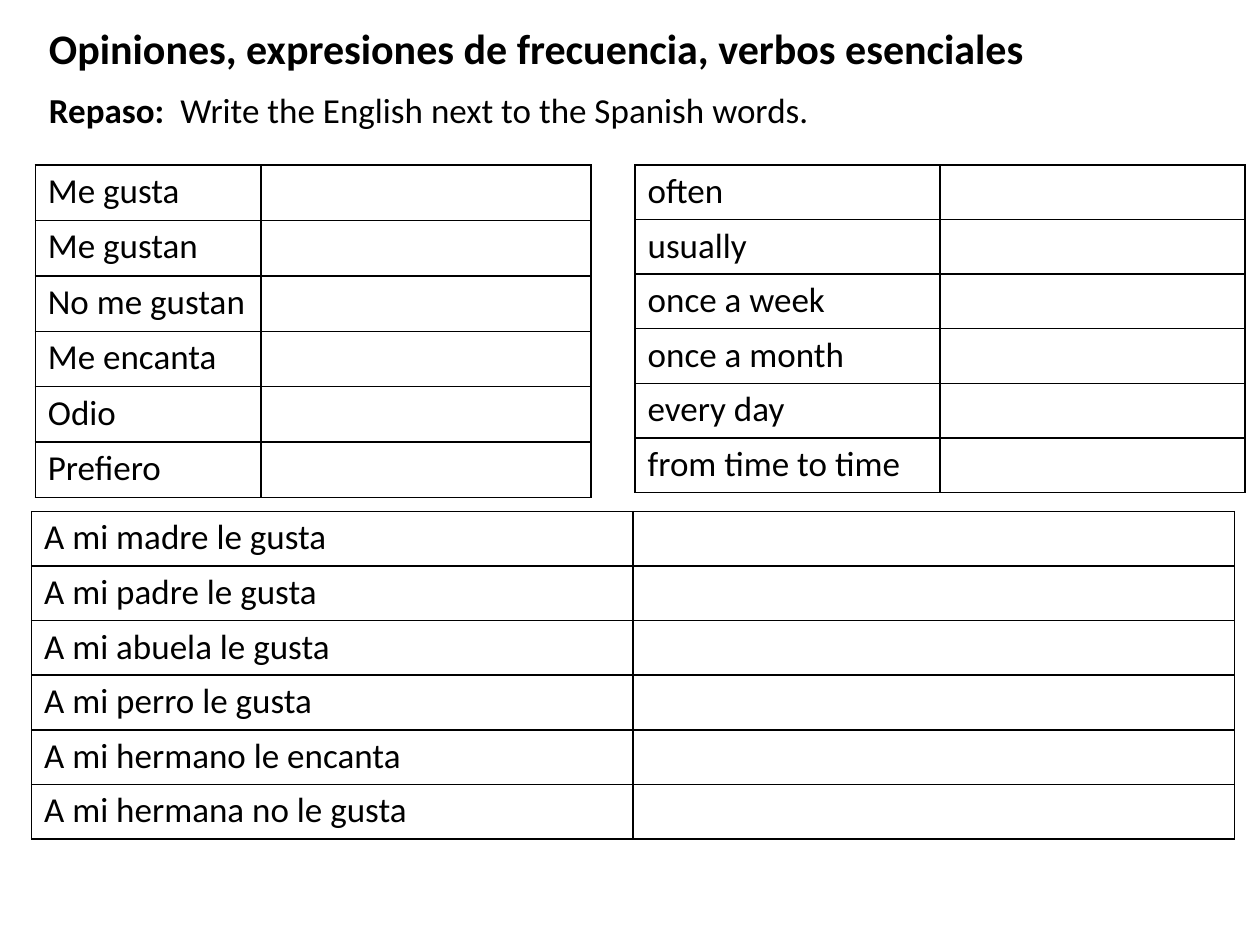
import dataclasses

import lxml.etree
import pptx
import pptx.dml.color
import pptx.oxml.ns
import pptx.util

SLIDE_WIDTH = pptx.util.Inches(10)
SLIDE_HEIGHT = pptx.util.Inches(7.5)
GRID_COLUMNS = 100
GRID_ROWS = 75
FONT = "Calibri"
BLACK = "000000"
BORDER_POINTS = 1


@dataclasses.dataclass(frozen=True)
class VocabularyTable:
    """A two-column table of phrases with blank answer cells, in grid units."""

    left: float
    top: float
    widths: tuple[float, float]
    height: float
    phrases: tuple[str, ...]


@dataclasses.dataclass(frozen=True)
class Heading:
    """A line of text made of (words, bold) pieces, in grid units."""

    left: float
    top: float
    width: float
    height: float
    size: int
    pieces: tuple[tuple[str, bool], ...]


OPINIONS = VocabularyTable(
    2.8, 13.1, (17.9, 26.2), 26.4,
    ("Me gusta", "Me gustan", "No me gustan", "Me encanta", "Odio", "Prefiero"),
)
FAMILY = VocabularyTable(
    2.5, 40.6, (47.75, 47.75), 26,
    (
        "A mi madre le gusta",
        "A mi padre le gusta",
        "A mi abuela le gusta",
        "A mi perro le gusta",
        "A mi hermano le encanta",
        "A mi hermana no le gusta",
    ),
)
FREQUENCY = VocabularyTable(
    50.4, 13.1, (24.2, 24.2), 26,
    ("often", "usually", "once a week", "once a month", "every day", "from time to time"),
)
INSTRUCTION = Heading(
    2.9, 6.5, 95.3, 4.4, 20,
    (("Repaso:  ", True), ("Write the English next to the Spanish words.", False)),
)
TITLE = Heading(
    2.9, 1.3, 90.5, 5, 24,
    (("Opiniones, expresiones de frecuencia, verbos esenciales", True),),
)


def across(columns: float) -> int:
    """Convert grid columns to a length."""
    return round(SLIDE_WIDTH * columns / GRID_COLUMNS)


def down(rows: float) -> int:
    """Convert grid rows to a length."""
    return round(SLIDE_HEIGHT * rows / GRID_ROWS)


def color(value: str) -> pptx.dml.color.RGBColor:
    """Turn a hex string into a colour."""
    return pptx.dml.color.RGBColor.from_string(value)


def add_text(paragraph, text: str, *, size: int = 20, bold: bool = False) -> None:
    """Append a formatted run to a paragraph."""
    run = paragraph.add_run()
    run.text = text
    run.font.name = FONT
    run.font.size = pptx.util.Pt(size)
    run.font.bold = bold
    run.font.color.rgb = color(BLACK)


def format_cell(cell) -> None:
    """Clear the fill of a cell, tighten its margins and border every side."""
    cell.margin_top = cell.margin_bottom = pptx.util.Inches(0.04)
    properties = cell._tc.get_or_add_tcPr()
    for side in ("a:lnL", "a:lnR", "a:lnT", "a:lnB"):
        line = lxml.etree.SubElement(
            properties, pptx.oxml.ns.qn(side), w=str(pptx.util.Pt(BORDER_POINTS))
        )
        fill = lxml.etree.SubElement(line, pptx.oxml.ns.qn("a:solidFill"))
        lxml.etree.SubElement(fill, pptx.oxml.ns.qn("a:srgbClr"), val=BLACK)
    cell.fill.background()


def add_vocabulary(slide, vocabulary: VocabularyTable) -> None:
    """Draw a vocabulary table."""
    table = slide.shapes.add_table(
        len(vocabulary.phrases),
        len(vocabulary.widths),
        across(vocabulary.left),
        down(vocabulary.top),
        across(sum(vocabulary.widths)),
        down(vocabulary.height),
    ).table
    table.first_row = table.horz_banding = False
    for column, width in zip(table.columns, vocabulary.widths):
        column.width = across(width)
    for index, phrase in enumerate(vocabulary.phrases):
        add_text(table.cell(index, 0).text_frame.paragraphs[0], phrase)
    for cell in table.iter_cells():
        format_cell(cell)


def add_heading(slide, heading: Heading) -> None:
    """Draw a line of heading text."""
    shape = slide.shapes.add_textbox(
        across(heading.left), down(heading.top), across(heading.width), down(heading.height)
    )
    shape.text_frame.word_wrap = True
    for text, bold in heading.pieces:
        add_text(shape.text_frame.paragraphs[0], text, size=heading.size, bold=bold)


def main() -> None:
    """Build the vocabulary review slide."""
    presentation = pptx.Presentation()
    presentation.slide_width = SLIDE_WIDTH
    presentation.slide_height = SLIDE_HEIGHT
    slide = presentation.slides.add_slide(presentation.slide_layouts[6])
    for vocabulary in (OPINIONS, FAMILY, FREQUENCY):
        add_vocabulary(slide, vocabulary)
    for heading in (INSTRUCTION, TITLE):
        add_heading(slide, heading)
    presentation.save("out.pptx")


if __name__ == "__main__":
    main()
